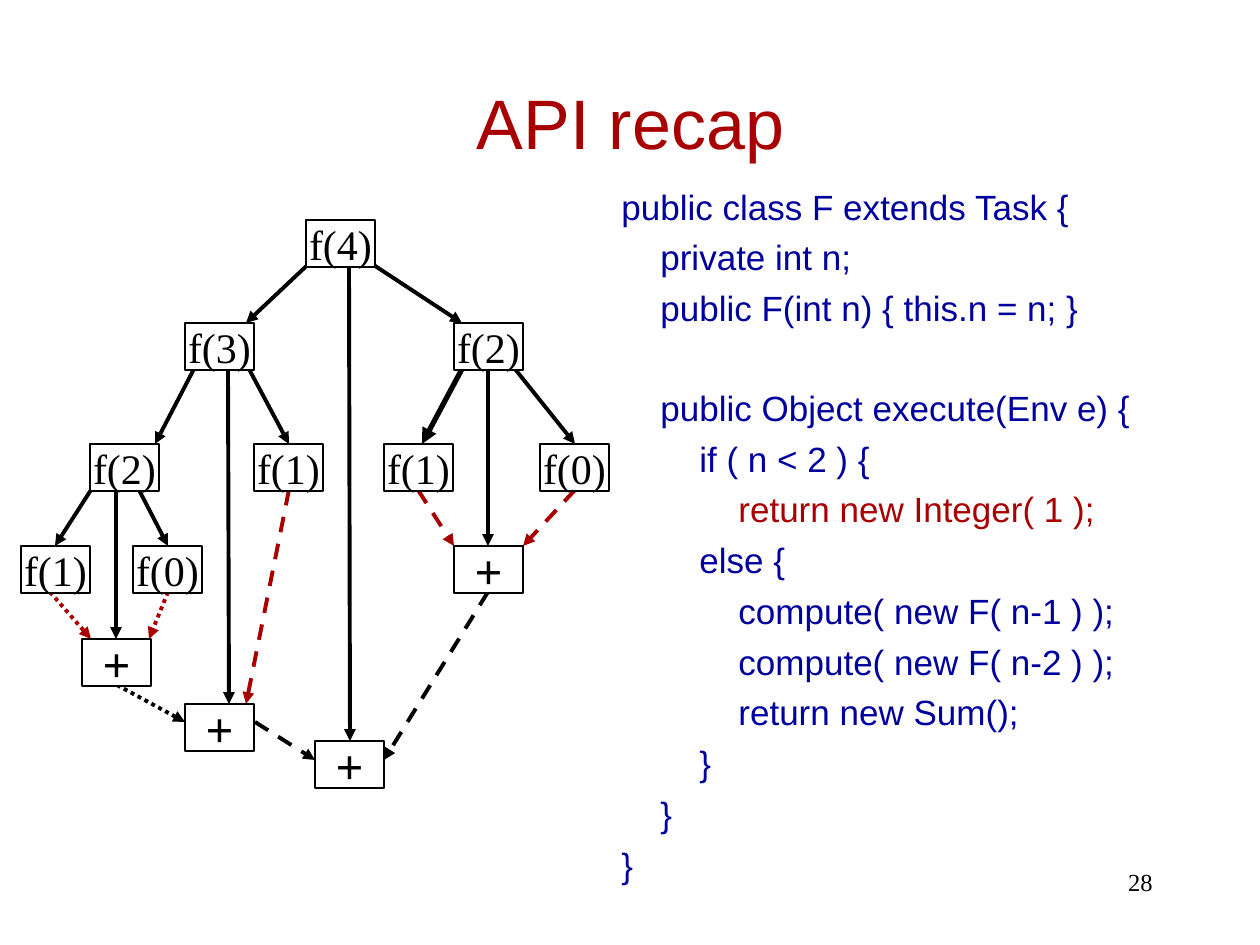
from typing import NamedTuple

from pptx import Presentation
from pptx.dml.color import RGBColor
from pptx.enum.dml import MSO_LINE
from pptx.enum.shapes import MSO_CONNECTOR, MSO_SHAPE
from pptx.enum.text import MSO_ANCHOR, PP_ALIGN
from pptx.oxml.ns import qn
from pptx.util import Pt
from lxml.etree import SubElement

EMU_PER_PX = 914400 / 126
NODE_WIDTH, NODE_HEIGHT = 69, 47
INDENT = 39  # one level of code
COLORS = {"black": "000000", "white": "FFFFFF", "red": "A80000", "blue": "00009F"}
SERIF, SANS = "Times New Roman", "Arial"
DASH, DOT = MSO_LINE.DASH, MSO_LINE.ROUND_DOT


class Node(NamedTuple):
    text: str
    left: int
    top: int


class Arrow(NamedTuple):
    start: tuple[int, int]
    end: tuple[int, int]
    color: str = "black"
    dash: MSO_LINE | None = None
    weight: float = 2.25


class CodeLine(NamedTuple):
    level: int
    text: str
    color: str = "blue"
    space_before: int = 5


NODES = [
    Node("f(4)", 306, 220),
    Node("f(3)", 185, 323), Node("f(2)", 454, 323),
    Node("f(2)", 90, 444), Node("f(1)", 254, 444),
    Node("f(1)", 384, 444), Node("f(0)", 540, 444),
    Node("f(1)", 21, 546), Node("f(0)", 133, 546), Node("+", 454, 546),
    Node("+", 82, 639), Node("+", 185, 704), Node("+", 315, 741),
]

ARROWS = [
    # Calls from f(4)
    Arrow((349, 258), (350, 741)),
    Arrow((315, 258), (246, 323)),
    Arrow((363, 258), (462, 323)),
    # Calls from f(3)
    Arrow((228, 369), (229, 704)),
    Arrow((194, 369), (155, 444)),
    Arrow((249, 369), (289, 444)),
    # Calls from the right f(2)
    Arrow((488, 369), (488, 546)),
    Arrow((462, 369), (422, 444), weight=3),
    Arrow((515, 369), (575, 444)),
    # Calls from the left f(2)
    Arrow((116, 490), (116, 639)),
    Arrow((91, 490), (55, 546)),
    Arrow((139, 490), (168, 546)),
    # Results passed to the sums
    Arrow((575, 490), (523, 546), "red", DASH),
    Arrow((418, 490), (454, 546), "red", DASH),
    Arrow((289, 490), (246, 704), "red", DASH),
    Arrow((255, 722), (315, 760), "black", DASH),
    Arrow((488, 592), (384, 760), "black", DASH),
    Arrow((168, 592), (149, 639), "red", DOT),
    Arrow((50, 592), (91, 639), "red", DOT),
    Arrow((117, 685), (185, 722), "black", DOT),
]

CODE = [
    CodeLine(0, "public class F extends Task {", space_before=0),
    CodeLine(1, "private int n;"),
    CodeLine(1, "public F(int n) { this.n = n; }"),
    CodeLine(1, "public Object execute(Env e) {", space_before=33),
    CodeLine(2, "if ( n < 2 ) {"),
    CodeLine(3, "return new Integer( 1 );", "red"),
    CodeLine(2, "else {"),
    CodeLine(3, "compute( new F( n-1 ) );"),
    CodeLine(3, "compute( new F( n-2 ) );"),
    CodeLine(3, "return new Sum();"),
    CodeLine(2, "}"),
    CodeLine(1, "}"),
    CodeLine(0, "}"),
]


def px(length: int) -> int:
    return round(length * EMU_PER_PX)


def rgb(name: str) -> RGBColor:
    return RGBColor.from_string(COLORS[name])


def format_runs(paragraph, font_name: str, size: int, color: str, bold: bool = False) -> None:
    for run in paragraph.runs:
        run.font.name = font_name
        run.font.size = Pt(size)
        run.font.bold = bold
        run.font.color.rgb = rgb(color)


def add_text(slide, left: int, top: int, width: int, height: int):
    text_frame = slide.shapes.add_textbox(px(left), px(top), px(width), px(height)).text_frame
    text_frame.word_wrap = True
    return text_frame


def add_code(slide, lines: list[CodeLine]) -> None:
    text_frame = add_text(slide, 609, 179, 620, 672)
    text_frame.text = "\n".join(line.text for line in lines)
    for paragraph, line in zip(text_frame.paragraphs, lines):
        paragraph.space_before = Pt(line.space_before)
        properties = paragraph._p.get_or_add_pPr()
        properties.set("marL", str(px(line.level * INDENT)))
        properties.set("indent", "0")
        format_runs(paragraph, SANS, 20, line.color)


def add_arrow(slide, arrow: Arrow) -> None:
    connector = slide.shapes.add_connector(
        MSO_CONNECTOR.STRAIGHT, *map(px, arrow.start + arrow.end))
    connector.line.color.rgb = rgb(arrow.color)
    connector.line.width = Pt(arrow.weight)
    if arrow.dash:
        connector.line.dash_style = arrow.dash
    SubElement(connector.line._get_or_add_ln(), qn("a:tailEnd"), type="triangle")
    SubElement(connector._element.spPr, qn("a:effectLst"))


def add_node(slide, node: Node) -> None:
    shape = slide.shapes.add_shape(
        MSO_SHAPE.RECTANGLE, px(node.left), px(node.top), px(NODE_WIDTH), px(NODE_HEIGHT))
    shape.shadow.inherit = False
    shape.fill.solid()
    shape.fill.fore_color.rgb = rgb("white")
    shape.line.color.rgb = rgb("black")
    shape.line.width = Pt(0.75)
    text_frame = shape.text_frame
    text_frame.word_wrap = False
    text_frame.vertical_anchor = MSO_ANCHOR.MIDDLE
    text_frame.text = node.text
    paragraph = text_frame.paragraphs[0]
    paragraph.alignment = PP_ALIGN.CENTER
    is_sum = node.text == "+"
    format_runs(paragraph, SERIF, 28 if is_sum else 24, "black", is_sum)


def main() -> None:
    presentation = Presentation()
    presentation.slide_width, presentation.slide_height = px(1260), px(945)
    slide = presentation.slides.add_slide(presentation.slide_layouts[6])

    # Title
    title = add_text(slide, 95, 42, 1071, 158)
    title.vertical_anchor = MSO_ANCHOR.MIDDLE
    title.text = "API recap"
    title.paragraphs[0].alignment = PP_ALIGN.CENTER
    format_runs(title.paragraphs[0], SANS, 40, "red")

    # Code listing
    add_code(slide, CODE)

    # Call tree
    for arrow in ARROWS:
        add_arrow(slide, arrow)
    for node in NODES:
        add_node(slide, node)

    # Page number
    number = add_text(slide, 903, 861, 262, 63)
    number.text = "28"
    number.paragraphs[0].alignment = PP_ALIGN.RIGHT
    format_runs(number.paragraphs[0], SERIF, 14, "black")

    presentation.save("out.pptx")


if __name__ == "__main__":
    main()
